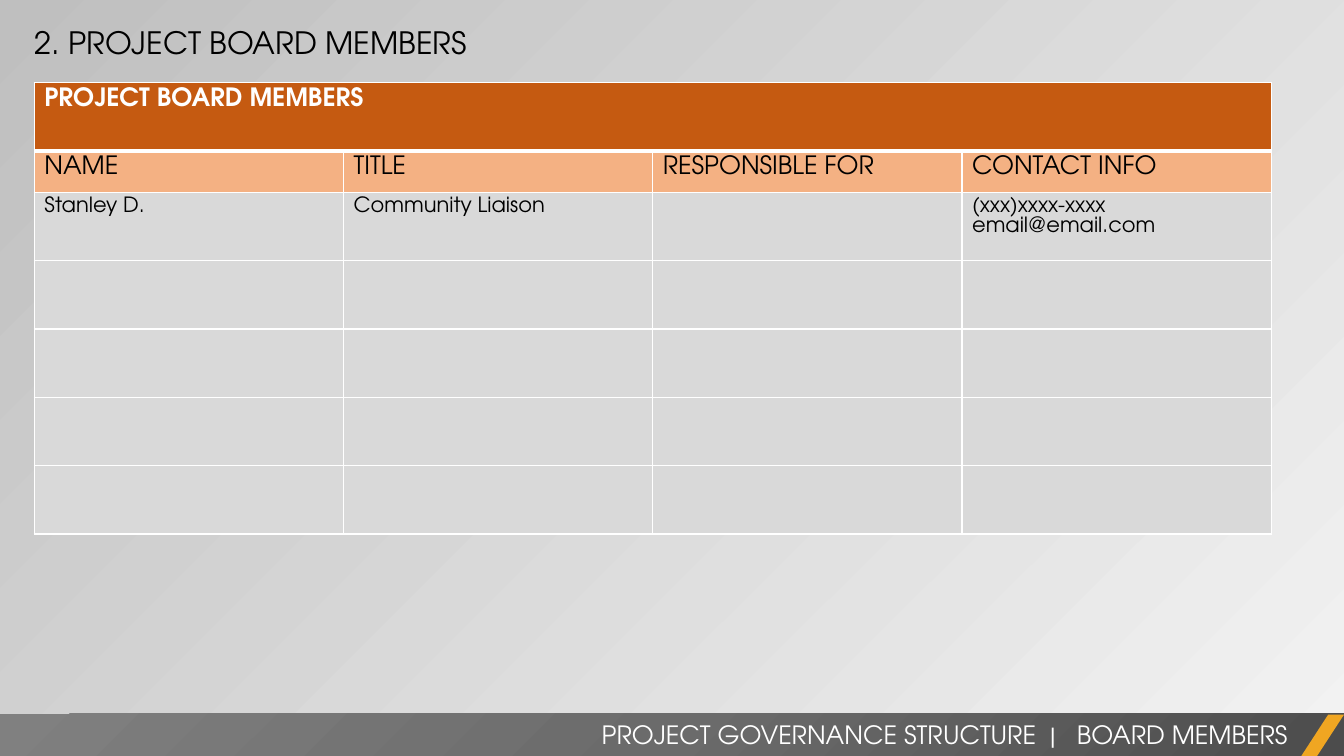
import pptx
import pptx.util
import pptx.oxml
import pptx.dml.color
import pptx.enum.shapes
import pptx.enum.text

Inches = pptx.util.Inches
Pt = pptx.util.Pt
SHAPE = pptx.enum.shapes.MSO_SHAPE
ALIGN = pptx.enum.text.PP_ALIGN
ANCHOR = pptx.enum.text.MSO_ANCHOR

FACE = "TeX Gyre Adventor"
HUES = {"white": "FFFFFF", "black": "000000", "rust": "C55A11",
        "peach": "F4B183", "grey": "D9D9D9", "gold": "F0A622"}
WASH = ([(0, "F2F2F2", 40), (100, "BFBFBF", 100)],
        '<a:lin ang="13500000" scaled="0"/>')
SHADE = ([(0, "4C4C4C", 100), (50, "6B6B6B", 100), (100, "808080", 100)],
         '<a:path path="circle"><a:fillToRect l="100000" t="100000"/></a:path>')
TITLE = "2. PROJECT BOARD MEMBERS"
FOOTER = "PROJECT GOVERNANCE STRUCTURE  |   BOARD MEMBERS"
BANNER = "PROJECT BOARD MEMBERS"
HEADS = ["NAME", "TITLE", "RESPONSIBLE FOR", "CONTACT INFO"]
MEMBERS = [["Stanley D.", "Community Liaison", "",
            "(xxx)xxxx-xxxx\nemail@email.com"]]
SPARE = 4
WIDE, TALL = 13.33, 7.5
GRID = (0.34, 0.82, 12.27, 4.48)
SLIM = 0.41
BAR = (0, 7.08, WIDE, 0.43)
SLASH = (12.9, 7.09, 0.43, 0.42)
BOXES = [
    (TITLE, (0.24, 0.19, 6.67, 0.47), {"size": 22, "hue": "black"}, ALIGN.LEFT),
    (FOOTER, (5.25, 7.09, 7.62, 0.4), {"size": 18, "hue": "white"}, ALIGN.RIGHT),
]
STYLES = {
    "banner": ("rust", {"size": 18, "hue": "white", "bold": True}),
    "head": ("peach", {"size": 18, "hue": "black", "bold": False}),
    "body": ("grey", {"size": 15, "hue": "black", "bold": False}),
}


def rgb(hue):
    return pptx.dml.color.RGBColor.from_string(HUES[hue])


def node(tag, body):
    url = "http://schemas.openxmlformats.org/drawingml/2006/main"
    return pptx.oxml.parse_xml(f'<a:{tag} xmlns:a="{url}"{body}</a:{tag}>')


def blend(fill, props, stops, tail):
    fill.gradient()
    old = props.find(".//" + pptx.oxml.ns.qn("a:gradFill"))
    marks = "".join(
        f'<a:gs pos="{at * 1000}"><a:srgbClr val="{hue}">'
        f'<a:alpha val="{alpha * 1000}"/></a:srgbClr></a:gs>'
        for at, hue, alpha in stops)
    new = node("gradFill", f' rotWithShape="1"><a:gsLst>{marks}</a:gsLst>{tail}')
    old.getparent().replace(old, new)


def ink(font, look):
    values = {"name": FACE, "size": Pt(look["size"]),
              "bold": look.get("bold", False)}
    for key, value in values.items():
        setattr(font, key, value)
    font.color.rgb = rgb(look["hue"])


def block(slide, kind, place):
    shape = slide.shapes.add_shape(kind, *map(Inches, place))
    shape.shadow.inherit = False
    shape.line.fill.background()
    return shape


def label(slide, text, place, look, align):
    frame = slide.shapes.add_textbox(*map(Inches, place)).text_frame
    frame.word_wrap = True
    frame.text = text
    line = frame.paragraphs[0]
    line.alignment = align
    ink(line.runs[0].font, look)


def edge(cell, base):
    props = cell._tc.get_or_add_tcPr()
    sides = {"L": 1, "R": 1, "T": 1, "B": base}
    for spot, (side, size) in enumerate(sides.items()):
        props.insert(spot, node(
            "ln" + side, f' w="{Pt(size)}"><a:solidFill>'
            f'<a:srgbClr val="{HUES["white"]}"/></a:solidFill>'))


def paint(cell, text, style):
    hue, look = STYLES[style]
    cell.text = text
    cell.vertical_anchor = ANCHOR.TOP
    cell.fill.solid()
    cell.fill.fore_color.rgb = rgb(hue)
    for line in cell.text_frame.paragraphs:
        ink(line.font, look)
        for run in line.runs:
            ink(run.font, look)
    edge(cell, 3 if style == "banner" else 1)


def board(slide):
    blank = [""] * len(HEADS)
    rows = [("banner", [BANNER] + blank[1:]), ("head", HEADS)]
    rows += [("body", row) for row in MEMBERS + [blank] * SPARE]
    wide, tall = GRID[2:]
    high = (tall - SLIM) / (len(rows) - 1)
    table = slide.shapes.add_table(
        len(rows), len(HEADS), *map(Inches, GRID)).table
    for flag in ("first_row", "horz_banding"):
        setattr(table, flag, False)
    for col in table.columns:
        col.width = Inches(wide / len(HEADS))
    for r, (style, texts) in enumerate(rows):
        table.rows[r].height = Inches(SLIM if style == "head" else high)
        for c, text in enumerate(texts):
            paint(table.cell(r, c), text, style)
    table.cell(0, 0).merge(table.cell(0, len(HEADS) - 1))


def main():
    deck = pptx.Presentation()
    size = {"slide_width": Inches(WIDE), "slide_height": Inches(TALL)}
    for key, value in size.items():
        setattr(deck, key, value)
    slide = deck.slides.add_slide(deck.slide_layouts[6])
    blend(slide.background.fill, slide._element, *WASH)
    bar = block(slide, SHAPE.RECTANGLE, BAR)
    blend(bar.fill, bar._element, *SHADE)
    slash = block(slide, SHAPE.PARALLELOGRAM, SLASH)
    slash.adjustments[0] = 0.65
    slash.fill.solid()
    slash.fill.fore_color.rgb = rgb("gold")
    board(slide)
    for box in BOXES:
        label(slide, *box)
    deck.save("out.pptx")


if __name__ == "__main__":
    main()
